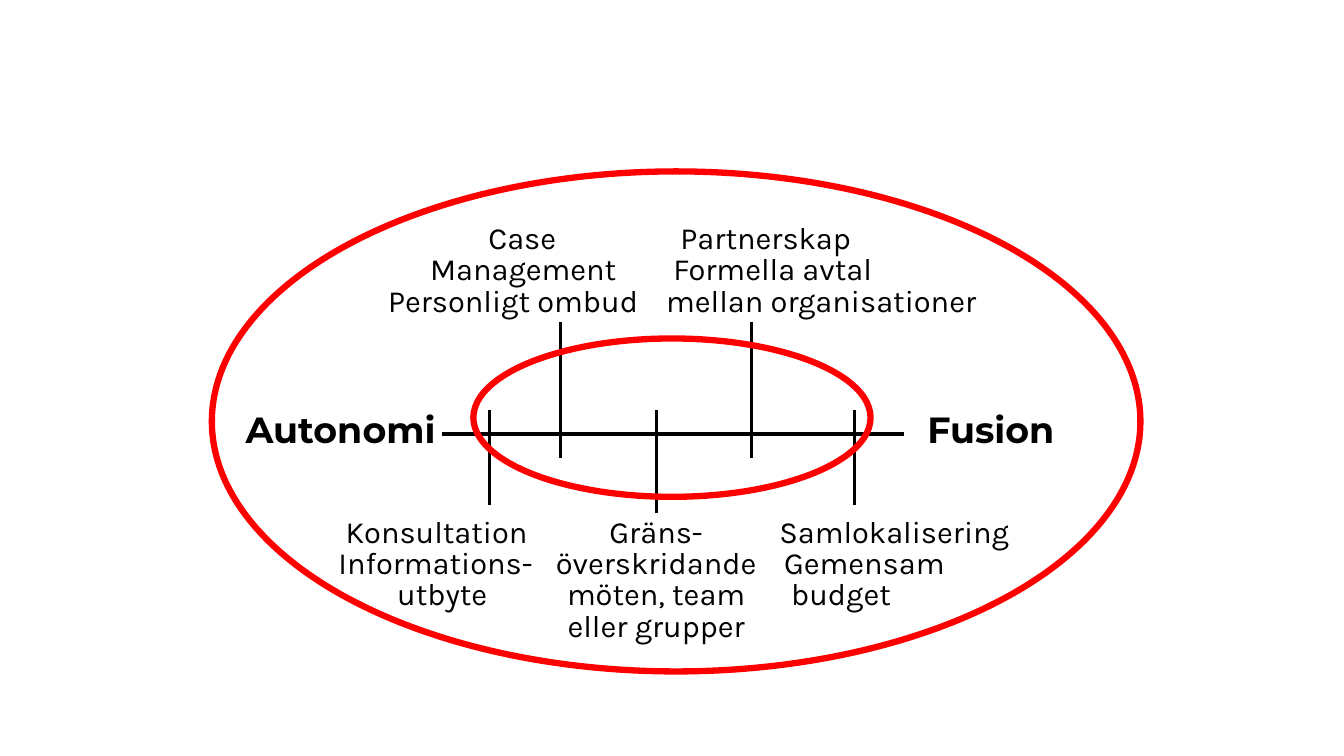
from pptx import Presentation
from pptx.dml.color import RGBColor
from pptx.enum.shapes import MSO_CONNECTOR, MSO_SHAPE
from pptx.enum.text import PP_ALIGN
from pptx.util import Cm, Pt

LEFT, MID, RIGHT = PP_ALIGN.LEFT, PP_ALIGN.CENTER, PP_ALIGN.RIGHT
LINE, OVAL = MSO_CONNECTOR.STRAIGHT, MSO_SHAPE.OVAL
BLACK, RED = "000000", "FF0000"

AXIS = (11.13, 22.78, 10.94)
TICKS = [
    (12.34, 10.32, 12.73),
    (21.54, 10.32, 12.73),
    (14.13, 8.12, 11.53),
    (16.54, 10.32, 12.93),
    (18.94, 8.12, 11.53),
]
ENDS = [
    ((5.94, 10.13, 5.51, 1.35), [("Autonomi", LEFT, 0)]),
    ((22.86, 10.13, 5.28, 1.35), [("Fusion", LEFT, 0.26)]),
]
FORMS = [
    ((7.72, 12.93, 6.2, 2.67), [
        ("Konsultation", LEFT, 0.74),
        ("Informations-", LEFT, 0.56),
        ("utbyte", LEFT, 2.04)]),
    ((19.13, 12.93, 6.81, 2.67), [
        ("Samlokalisering", MID, 0),
        ("Gemensam", LEFT, 0.38),
        ("budget", LEFT, 0.56)]),
    ((8.94, 5.53, 7.39, 2.67), [
        ("Case", LEFT, 3.12),
        ("Management", LEFT, 1.65),
        ("Personligt ombud", RIGHT, 0)]),
    ((13.54, 12.93, 5.99, 3.45), [
        ("Gräns-", MID, 0),
        ("överskridande möten, team eller grupper", MID, 0)]),
    ((16.54, 5.53, 9.4, 3.91), [
        ("Partnerskap", LEFT, 0.36),
        ("Formella avtal", LEFT, 0.18),
        ("mellan organisationer", LEFT, 0)]),
]
RINGS = [(11.93, 8.53, 10.01, 3.99), (5.34, 4.32, 23.4, 12.6)]


def color(text):
    return RGBColor.from_string(text)


def place(box):
    return [Cm(n) for n in box]


def label(box, lines, name, size, bold, gap):
    frame = shapes.add_textbox(*place(box)).text_frame
    frame.word_wrap = True
    for i, (text, align, inset) in enumerate(lines):
        para = frame.add_paragraph() if i else frame.paragraphs[0]
        para.text = text
        para.alignment = align
        para.line_spacing = gap
        para._p.get_or_add_pPr().set("marL", str(Cm(inset)))
        font = para.font
        font.name, font.size, font.bold = name, Pt(size), bold
        font.color.rgb = color(BLACK)


def rule(ends, width):
    line = shapes.add_connector(LINE, *place(ends))
    line.line.color.rgb = color(BLACK)
    line.line.width = Pt(width)
    props = line._element.spPr
    props.append(props.makeelement(
        "{http://schemas.openxmlformats.org/drawingml/2006/main}effectLst"))


deck = Presentation()
deck.slide_width, deck.slide_height = Cm(33.87), Cm(19.05)
slide = deck.slides.add_slide(deck.slide_layouts[6])
shapes = slide.shapes

start, stop, level = AXIS
rule((start, level, stop, level), 3)
for x, top, foot in TICKS:
    rule((x, top, x, foot), 2.25)
for box, lines in ENDS:
    label(box, lines, "Montserrat", 26, True, 1)
for box, lines in FORMS:
    label(box, lines, "Karla", 22, False, 0.85)
for box in RINGS:
    ring = shapes.add_shape(OVAL, *place(box))
    ring.shadow.inherit = False
    ring.fill.background()
    ring.line.color.rgb = color(RED)
    ring.line.width = Pt(4.5)

deck.save("out.pptx")
